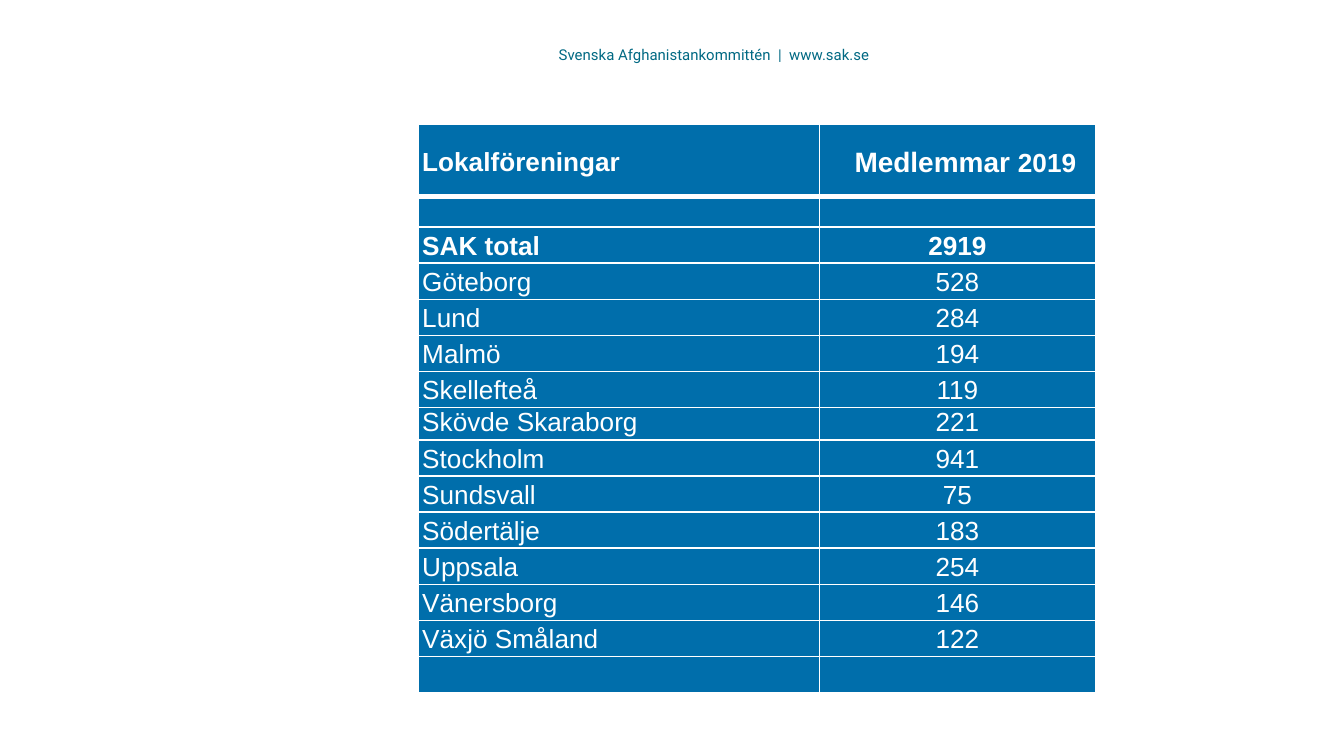
from dataclasses import dataclass

from lxml.etree import SubElement
from pptx import Presentation
from pptx.dml.color import RGBColor
from pptx.enum.text import MSO_ANCHOR as Anchor, PP_ALIGN as Align
from pptx.oxml.ns import qn
from pptx.util import Cm, Pt


@dataclass(frozen=True)
class Theme:
    blue: str = "006EAB"
    teal: str = "006983"
    white: str = "FFFFFF"
    body_font: str = "Arial"
    banner_font: str = "Roboto"
    banner_size: int = 8
    body_size: int = 14
    heading_size: int = 15
    empty_size: int = 10


theme = Theme()


def add_text(para, text, size=theme.body_size, font=theme.body_font,
             color=theme.white, bold=False, align=Align.LEFT, spacing=None):
    para.alignment = align
    if spacing:
        para.line_spacing = spacing
    span = para.add_run()
    span.text = text
    span.font.size = Pt(size)
    span.font.name = font
    span.font.bold = bold
    span.font.color.rgb = RGBColor.from_string(color)


def add_borders(cell, bottom=1):
    """Draw white cell borders, which must come before the fill in the XML."""
    for side, width in (("L", 1), ("R", 1), ("T", 1), ("B", bottom)):
        line = SubElement(cell._tc.get_or_add_tcPr(), qn(f"a:ln{side}"), w=str(Pt(width)))
        fill = SubElement(line, qn("a:solidFill"))
        SubElement(fill, qn("a:srgbClr"), val=theme.white)


deck = Presentation()
deck.slide_width, deck.slide_height = Cm(25.4), Cm(14.28)
page = deck.slides.add_slide(deck.slide_layouts[6])

# Banner
banner = page.shapes.add_textbox(Cm(10.31), Cm(0.74), Cm(6.68), Cm(0.61)).text_frame
banner.word_wrap = True
add_text(banner.paragraphs[0], "Svenska Afghanistankommittén  |  www.sak.se",
         size=theme.banner_size, font=theme.banner_font, color=theme.teal)

# Members by local association; None is an empty row
members = [
    ("Lokalföreningar", "Medlemmar 2019"),
    None,
    ("SAK total", "2919"),
    ("Göteborg", "528"),
    ("Lund", "284"),
    ("Malmö", "194"),
    ("Skellefteå", "119"),
    ("Skövde Skaraborg", "221"),
    ("Stockholm", "941"),
    ("Sundsvall", "75"),
    ("Södertälje", "183"),
    ("Uppsala", "254"),
    ("Vänersborg", "146"),
    ("Växjö Småland", "122"),
    None,
]
header, total, compact = 0, 2, 7
row_heights = {header: 1.37, 1: 0.58, compact: 0.61}
heights = [Cm(row_heights.get(index, 0.68)) for index in range(len(members))]
widths = [Cm(7.59), Cm(5.21)]

table = page.shapes.add_table(len(members), len(widths), Cm(7.9), Cm(2.34),
                              sum(widths), sum(heights)).table
table.first_row = table.horz_banding = False
for column, width in zip(table.columns, widths):
    column.width = width

for index, entry in enumerate(members):
    table.rows[index].height = heights[index]
    for number, align in enumerate((Align.LEFT, Align.CENTER)):
        cell = table.cell(index, number)
        cell.margin_left = cell.margin_right = Cm(0.08)
        cell.margin_top = cell.margin_bottom = 0
        add_borders(cell, bottom=3 if index == header else 1)
        cell.fill.solid()
        cell.fill.fore_color.rgb = RGBColor.from_string(theme.blue)
        para = cell.text_frame.paragraphs[0]
        if entry is None:
            SubElement(para._p, qn("a:endParaRPr"), sz=str(theme.empty_size * 100))
            continue
        style = {"bold": index in (header, total), "align": align,
                 "spacing": None if index == compact else 1.15}
        if index == header:
            cell.vertical_anchor = Anchor.MIDDLE
        if index == header and number == 1:
            cell.margin_left = Cm(0.38)
            label, year = entry[number].split()
            add_text(para, label + " ", size=theme.heading_size, **style)
            add_text(para, year, **style)
        else:
            add_text(para, entry[number], **style)

deck.save("out.pptx")
